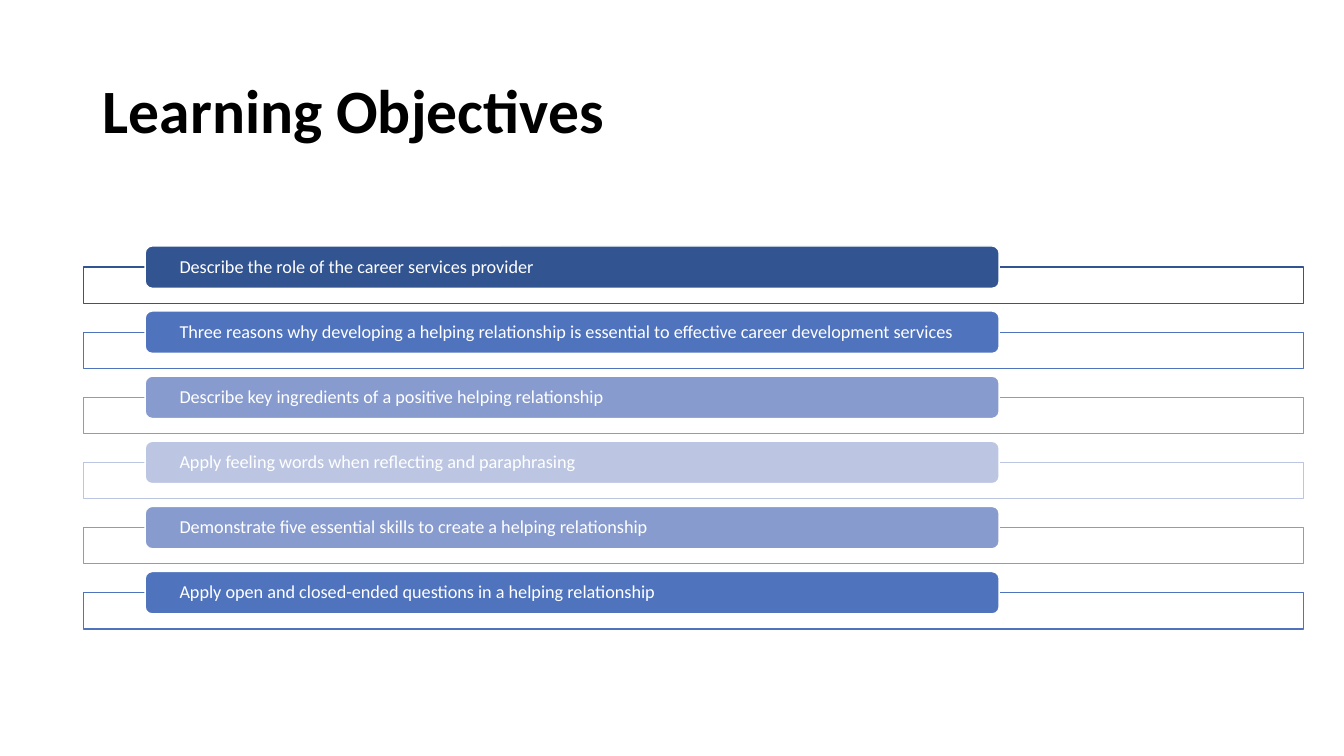
from dataclasses import dataclass

from lxml.etree import SubElement
from pptx import Presentation
from pptx.dml.color import RGBColor
from pptx.enum.shapes import MSO_SHAPE
from pptx.enum.text import MSO_ANCHOR, MSO_AUTO_SIZE, PP_ALIGN
from pptx.oxml.ns import qn
from pptx.shapes.autoshape import Shape
from pptx.slide import Slide
from pptx.text.text import TextFrame
from pptx.util import Inches, Pt

BLACK = RGBColor(0x00, 0x00, 0x00)
WHITE = RGBColor(0xFF, 0xFF, 0xFF)
NAVY = RGBColor(0x32, 0x54, 0x91)
BLUE = RGBColor(0x4F, 0x73, 0xBD)
SOFT_BLUE = RGBColor(0x87, 0x9B, 0xCE)
PALE_BLUE = RGBColor(0xBC, 0xC6, 0xE2)

# Row grid, in inches: equal steps from the first row to the last
FIRST_ROW, LAST_ROW = 2.44, 5.67
FRAME_DROP = 0.21
FONT_NAME = "Calibri"


@dataclass(frozen=True)
class Box:
    left: float
    top: float
    width: float
    height: float


@dataclass(frozen=True)
class Objective:
    wording: str
    color: RGBColor


OBJECTIVES = [
    Objective("Describe the role of the career services provider", NAVY),
    Objective("Three reasons why developing a helping relationship is essential "
              "to effective career development services", BLUE),
    Objective("Describe key ingredients of a positive helping relationship", SOFT_BLUE),
    Objective("Apply feeling words when reflecting and paraphrasing", PALE_BLUE),
    Objective("Demonstrate five essential skills to create a helping relationship", SOFT_BLUE),
    Objective("Apply open and closed-ended questions in a helping relationship", BLUE),
]

TITLE_FORMAT = {"name": FONT_NAME, "size": Pt(44), "bold": True}
OBJECTIVE_FORMAT = {"name": FONT_NAME, "size": Pt(13), "bold": False}
BAR_INSETS = {"margin_left": Inches(0.32), "margin_right": Inches(0.32),
              "margin_top": 0, "margin_bottom": 0}


def write(frame: TextFrame, wording: str, formats: dict, color: RGBColor) -> None:
    """Put one left-aligned, vertically centred paragraph in a frame."""
    frame.text = wording
    frame.word_wrap = True
    frame.auto_size = MSO_AUTO_SIZE.NONE
    frame.vertical_anchor = MSO_ANCHOR.MIDDLE
    paragraph = frame.paragraphs[0]
    paragraph.alignment = PP_ALIGN.LEFT
    paragraph.line_spacing = 0.9
    font = paragraph.runs[0].font
    for attribute, value in formats.items():
        setattr(font, attribute, value)
    font.color.rgb = color


def place(shape: Shape, box: Box) -> None:
    for side in ("left", "top", "width", "height"):
        setattr(shape, side, Inches(getattr(box, side)))


def add_panel(slide: Slide, preset: MSO_SHAPE, box: Box,
              fill: RGBColor, line: RGBColor) -> Shape:
    panel = slide.shapes.add_shape(preset, 0, 0, 0, 0)
    place(panel, box)
    panel.shadow.inherit = False
    panel.fill.solid()
    panel.fill.fore_color.rgb = fill
    panel.line.color.rgb = line
    panel.line.width = Pt(1)
    return panel


def add_objective(slide: Slide, objective: Objective, top: float) -> None:
    # Outlined frame, 90% opaque
    outline = add_panel(slide, MSO_SHAPE.RECTANGLE,
                        Box(0.83, top + FRAME_DROP, 12.1, 0.36), WHITE, objective.color)
    fill_color = outline.fill._xPr.find(qn("a:solidFill"))[0]
    SubElement(fill_color, qn("a:alpha"), val="90000")

    # Coloured bar with the wording
    bar = add_panel(slide, MSO_SHAPE.ROUNDED_RECTANGLE,
                    Box(1.44, top, 8.47, 0.42), objective.color, WHITE)
    for margin, value in BAR_INSETS.items():
        setattr(bar.text_frame, margin, value)
    write(bar.text_frame, objective.wording, OBJECTIVE_FORMAT, WHITE)


def main() -> None:
    deck = Presentation()
    deck.slide_width, deck.slide_height = Inches(13.33), Inches(7.5)
    slide = deck.slides.add_slide(deck.slide_layouts[5])

    # Title
    heading = slide.shapes.title
    place(heading, Box(0.92, 0.4, 11.5, 1.45))
    write(heading.text_frame, "Learning Objectives", TITLE_FORMAT, BLACK)

    # Objectives
    row_step = (LAST_ROW - FIRST_ROW) / (len(OBJECTIVES) - 1)
    for row, objective in enumerate(OBJECTIVES):
        add_objective(slide, objective, FIRST_ROW + row * row_step)

    deck.save("out.pptx")


if __name__ == "__main__":
    main()
